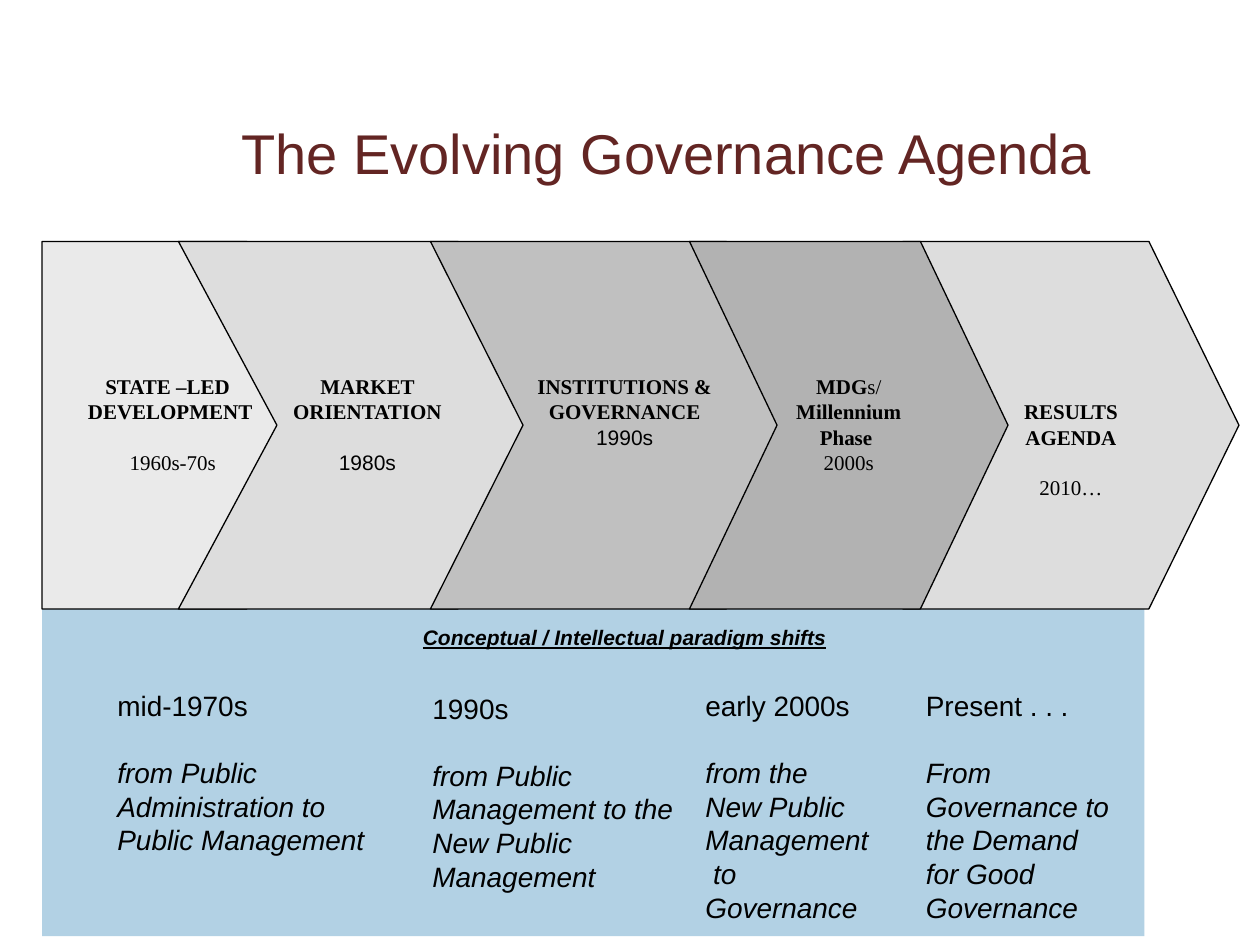
from dataclasses import dataclass

from pptx import Presentation
from pptx.dml.color import RGBColor
from pptx.enum import shapes, text
from pptx.util import Pt


@dataclass(frozen=True)
class Theme:
    title: RGBColor = RGBColor(0x63, 0x25, 0x23)
    ink: RGBColor = RGBColor(0, 0, 0)
    band: RGBColor = RGBColor(0xB2, 0xD1, 0xE4)
    pale: RGBColor = RGBColor(0xEA, 0xEA, 0xEA)
    light: RGBColor = RGBColor(0xDD, 0xDD, 0xDD)
    mid: RGBColor = RGBColor(0xC0, 0xC0, 0xC0)
    dark: RGBColor = RGBColor(0xB2, 0xB2, 0xB2)
    sans: str = "Arial"
    serif: str = "Times New Roman"
    title_size: float = 32
    label_size: float = 12
    body_size: float = 16
    leading: float = 1.2


T = Theme()
LABEL_LINE = T.label_size * T.leading
BODY_LINE = T.body_size * T.leading
CENTER = text.PP_ALIGN.CENTER
PLATE = shapes.MSO_SHAPE.PENTAGON
CHEVRON = shapes.MSO_SHAPE.CHEVRON

# left, width, shape, point depth, fill, lines above, label lines, period, period font, gap lines
STAGES = [
    (0, 176, PLATE, 0.335, T.pale, 5, ["STATE –LED ", "DEVELOPMENT"], " 1960s-70s", T.serif, 1),
    (78, 216, CHEVRON, 0.268, T.light, 5, ["MARKET ORIENTATION"], "1980s", T.sans, 1),
    (222, 222, CHEVRON, 0.252, T.mid, 5, ["INSTITUTIONS & GOVERNANCE"], "1990s", T.sans, 0),
    (370, 182, CHEVRON, 0.275, T.dark, 5, [("MDG", "s/"), "Millennium", "Phase "], "2000s", T.serif, 0),
    (492, 192, CHEVRON, 0.268, T.light, 6, ["RESULTS", "AGENDA"], "2010…", T.serif, 1),
]

SHIFTS = [
    (36, 95, 156, "mid-1970s", "from Public Administration to Public Management"),
    (216, 96.5, 162, "1990s", "from Public Management to the New Public Management"),
    (372, 95, 110, "early 2000s", "from the\vNew Public\vManagement\v to\vGovernance"),
    (498, 95, 121, "Present . . .", "From\vGovernance to the Demand for Good Governance"),
]


def add_block(s, kind, box, fill):
    sp = s.shapes.add_shape(kind, *map(Pt, box))
    sp.shadow.inherit = False
    sp.fill.solid()
    sp.fill.fore_color.rgb = fill
    sp.text_frame.word_wrap = True
    sp.text_frame.vertical_anchor = text.MSO_ANCHOR.TOP
    return sp


def add_line(tf, index, content, font, size, bold=False, italic=False, align=None, gap=0):
    p = tf.add_paragraph() if index else tf.paragraphs[0]
    p.alignment = align
    p.line_spacing = Pt(size * T.leading)
    p.space_before = Pt(gap)
    f = p.font
    f.name, f.size, f.bold, f.italic = font, Pt(size), bold, italic
    f.color.rgb = T.ink
    if isinstance(content, str):
        p.text = content
    else:
        for part in content:
            r = p.add_run()
            r.text = part
        r.font.bold = False
    return p


def draw_title(s, box):
    sp = s.shapes.title
    sp.left, sp.top, sp.width, sp.height = map(Pt, box)
    tf = sp.text_frame
    tf.text = "The Evolving Governance Agenda"
    tf.vertical_anchor = text.MSO_ANCHOR.MIDDLE
    p = tf.paragraphs[0]
    p.alignment = CENTER
    p.font.name, p.font.size = T.sans, Pt(T.title_size)
    p.font.color.rgb = T.title


def draw_stage(s, box, kind, depth, fill, lead, labels, period, period_font, gap):
    sp = add_block(s, kind, box, fill)
    sp.adjustments[0] = depth
    sp.line.color.rgb = T.ink
    sp.line.width = Pt(0.75)
    tf = sp.text_frame
    tf.margin_top = Pt(3.6 + lead * LABEL_LINE)
    for i, label in enumerate(labels):
        add_line(tf, i, label, T.serif, T.label_size, bold=True, align=CENTER)
    add_line(tf, len(labels), period, period_font, T.label_size,
             align=CENTER, gap=gap * LABEL_LINE)


def draw_timeline(s, box):
    x, y, _, h = box
    for left, width, *details in STAGES[-1:] + STAGES[:-1]:
        draw_stage(s, (x + left, y, width, h), *details)


def draw_shifts(s, box):
    x, y, _, h = box
    sp = add_block(s, shapes.MSO_SHAPE.RECTANGLE, box, T.band)
    sp.line.fill.background()
    tf = sp.text_frame
    tf.margin_top, tf.margin_left = Pt(62), Pt(43)
    p = add_line(tf, 0, "Conceptual / Intellectual paradigm shifts", T.sans,
                 T.label_size, bold=True, italic=True, align=CENTER)
    p.font.underline = True
    for left, top, width, period, change in SHIFTS:
        tb = s.shapes.add_textbox(Pt(x + left), Pt(y + top), Pt(width), Pt(h - top))
        tb.text_frame.word_wrap = True
        add_line(tb.text_frame, 0, period, T.sans, T.body_size)
        add_line(tb.text_frame, 1, change, T.sans, T.body_size, italic=True, gap=BODY_LINE)


def main():
    prs = Presentation()
    prs.slide_width, prs.slide_height = Pt(720), Pt(540)
    s = prs.slides.add_slide(prs.slide_layouts[5])
    draw_title(s, (42, 42, 678, 90))
    draw_shifts(s, (24, 295, 630, 240))
    draw_timeline(s, (24, 138, 684, 210))
    prs.save("out.pptx")


if __name__ == "__main__":
    main()
